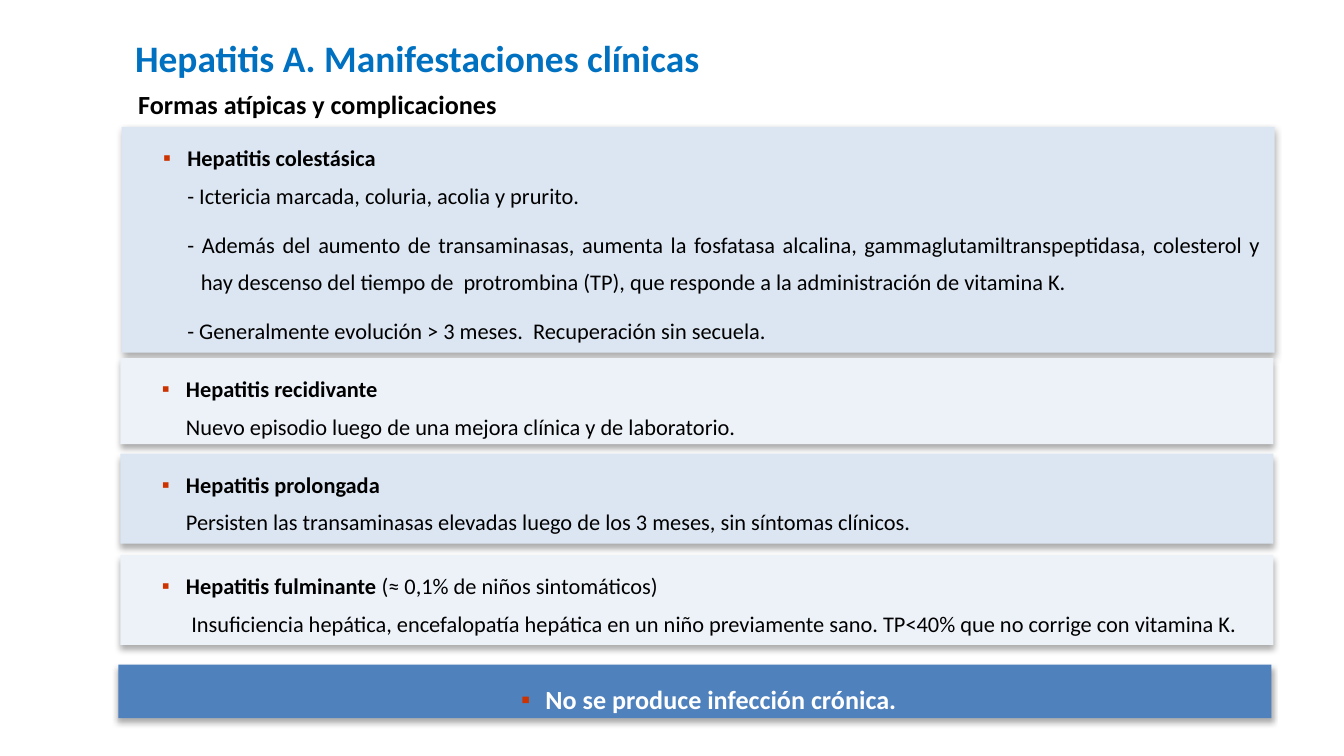
"""Builds the slide on atypical forms and complications of hepatitis A."""
from lxml.etree import SubElement
from pptx import Presentation
from pptx.dml.color import RGBColor
from pptx.enum.shapes import MSO_SHAPE
from pptx.enum.text import MSO_ANCHOR, PP_ALIGN
from pptx.oxml.ns import qn
from pptx.util import Pt

PX = 4572
SIZE = (2000, 1125)
FONT = "Calibri"
BLACK, WHITE, RED = "000000", "FFFFFF", "CC3300"
PALE, LIGHT, BLUE = "DCE6F2", "EDF2F9", "4F81BD"
WIDTH, MARGIN, HANG = 1716, 78, 36

TITLE = ("Hepatitis A. Manifestaciones clínicas", (181, 29, 1368, 114))
SUB = ("Formas atípicas y complicaciones", (186, 122, 578, 68))

FORMS = [
    {"at": (181, 189, 336), "fill": PALE, "head": ("Hepatitis colestásica", ""), "body": [
        ("- Ictericia marcada, coluria, acolia y prurito.", MARGIN, 0, 0),
        ("- Además del aumento de transaminasas, aumenta la fosfatasa alcalina, "
         "gammaglutamiltranspeptidasa, colesterol y hay descenso del tiempo de  protrombina (TP), "
         "que responde a la administración de vitamina K.", 98, -20, 6),
        ("- Generalmente evolución > 3 meses.  Recuperación sin secuela.", MARGIN, 0, 6)]},
    {"at": (179, 533, 128), "fill": LIGHT, "head": ("Hepatitis recidivante", ""), "body": [
        ("Nuevo episodio luego de una mejora clínica y de laboratorio.", MARGIN, 0, 0)]},
    {"at": (179, 675, 134), "fill": PALE, "head": ("Hepatitis prolongada", ""), "body": [
        ("Persisten las transaminasas elevadas luego de los 3 meses, sin síntomas clínicos.",
         MARGIN, 0, 0)]},
    {"at": (179, 826, 134), "fill": LIGHT,
     "head": ("Hepatitis fulminante ", "(≈ 0,1% de niños sintomáticos)"), "body": [
        ("Insuficiencia hepática, encefalopatía hepática en un niño previamente sano. "
         "TP<40% que no corrige con vitamina K.", 86, 0, 0)]},
    {"at": (176, 989, 80), "fill": BLUE, "head": ("No se produce infección crónica.", ""),
     "body": [], "size": 14, "ink": WHITE, "align": PP_ALIGN.CENTER},
]


def color(text):
    return RGBColor.from_string(text)


def scale(at):
    return [n * PX for n in at]


def style(run, size, ink=BLACK, bold=False):
    font = run.font
    font.name, font.size, font.bold = FONT, Pt(size), bold
    font.color.rgb = color(ink)


def shade(shape):
    shape.shadow.inherit = False
    effect = shape._element.spPr.find(qn("a:effectLst"))
    outer = SubElement(effect, qn("a:outerShdw"), blurRad=str(Pt(3.5)), dist=str(Pt(2.2)),
                       dir="5400000", rotWithShape="0")
    tint = SubElement(outer, qn("a:srgbClr"), val=BLACK)
    SubElement(tint, qn("a:alpha"), val="32000")


def indent(para, left, first, align):
    props = para._p.get_or_add_pPr()
    props.set("marL", str(left * PX))
    props.set("indent", str(first * PX))
    para.alignment, para.line_spacing = align, 1.4
    return props


def bullet(props):
    tint = SubElement(props, qn("a:buClr"))
    SubElement(tint, qn("a:srgbClr"), val=RED)
    SubElement(props, qn("a:buFont"), typeface="Arial")
    SubElement(props, qn("a:buChar"), char="▪")


def panel(slide, form):
    left, top, height = form["at"]
    size, ink = form.get("size", 12), form.get("ink", BLACK)
    align = form.get("align", PP_ALIGN.JUSTIFY)
    shape = slide.shapes.add_shape(MSO_SHAPE.RECTANGLE, *scale((left, top, WIDTH, height)))
    shape.fill.solid()
    shape.fill.fore_color.rgb = color(form["fill"])
    shape.line.fill.background()
    shade(shape)
    frame = shape.text_frame
    frame.word_wrap, frame.vertical_anchor = True, MSO_ANCHOR.TOP
    name, note = form["head"]
    head = frame.paragraphs[0]
    head.text = name
    style(head.runs[0], size, ink, True)
    if note:
        run = head.add_run()
        run.text = note
        style(run, size, ink)
    bullet(indent(head, MARGIN, -HANG, align))
    for text, margin, first, before in form["body"]:
        para = frame.add_paragraph()
        para.text = text
        style(para.runs[0], size, ink)
        indent(para, margin, first, align)
        if before:
            para.space_before = Pt(before)


def main():
    deck = Presentation()
    deck.slide_width, deck.slide_height = scale(SIZE)
    slide = deck.slides.add_slide(deck.slide_layouts[5])

    title = slide.shapes.title
    title.left, title.top, title.width, title.height = scale(TITLE[1])
    title.text_frame.text = TITLE[0]
    title.text_frame.vertical_anchor = MSO_ANCHOR.MIDDLE
    para = title.text_frame.paragraphs[0]
    para.alignment = PP_ALIGN.LEFT
    style(para.runs[0], 20, "0070C0", True)

    sub = slide.shapes.add_textbox(*scale(SUB[1]))
    sub.text_frame.text = SUB[0]
    sub.text_frame.word_wrap = False
    style(sub.text_frame.paragraphs[0].runs[0], 14, BLACK, True)

    for form in FORMS:
        panel(slide, form)
    deck.save("out.pptx")


if __name__ == "__main__":
    main()
